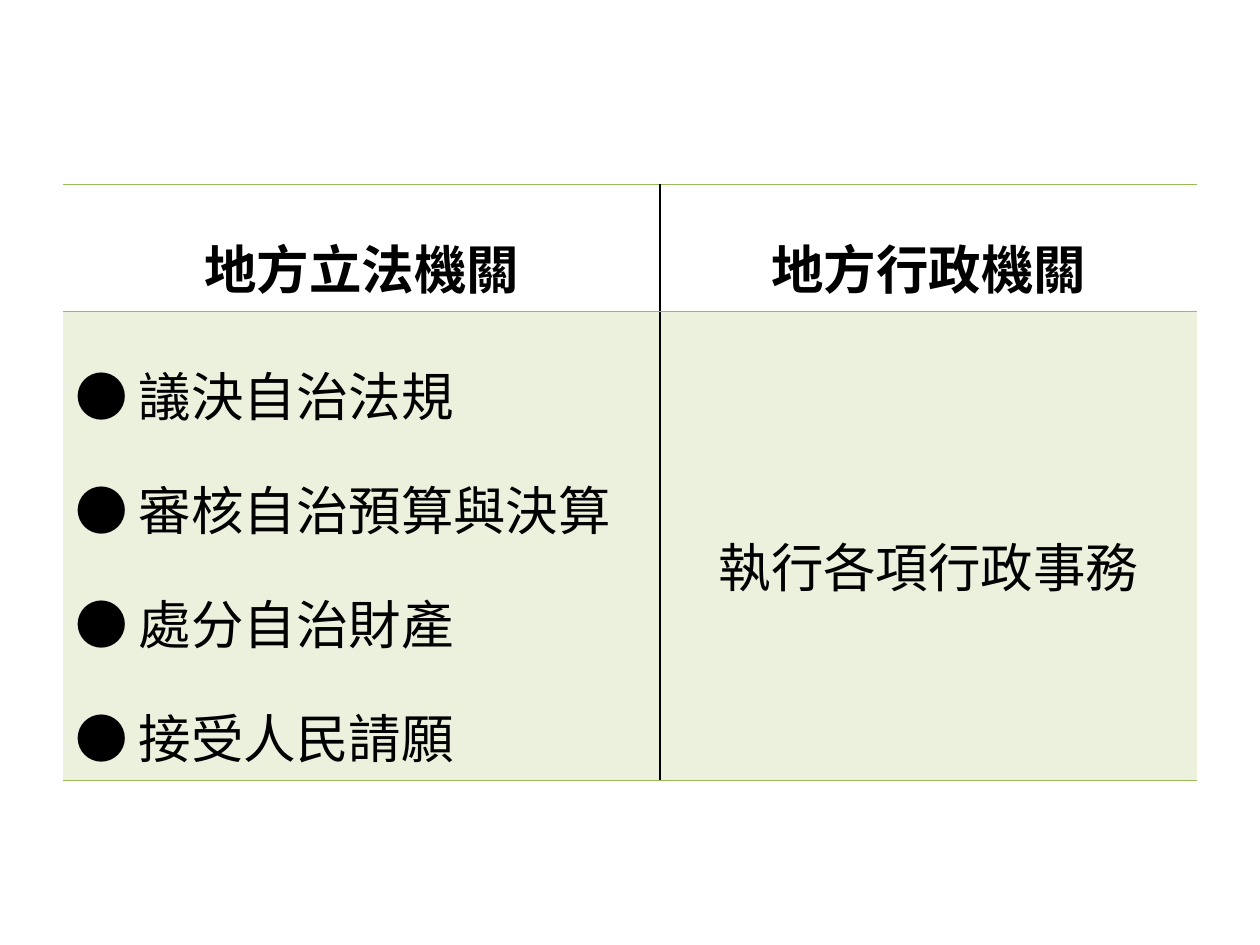
from dataclasses import dataclass

from lxml.etree import SubElement
from pptx import Presentation
from pptx.dml.color import RGBColor
from pptx.enum.text import MSO_ANCHOR as Anchor, PP_ALIGN as Align
from pptx.oxml.ns import qn
from pptx.util import Pt


@dataclass(frozen=True)
class Theme:
    """Colours and type of the slide."""
    font: str = "Noto Sans CJK SC"
    size: int = 30
    spacing: float = 1.5
    ink: str = "000000"
    green: str = "9BBB59"
    tint: int = 20
    rule: int = 1
    indent: int = 36


THEME = Theme()
HEADINGS = ["地方立法機關", "地方行政機關"]
DUTIES = [
    ["議決自治法規", "審核自治預算與決算", "處分自治財產", "接受人民請願"],
    ["執行各項行政事務"],
]


def set_borders(cell, left, right):
    """Rule a cell in green above and below, with the given side colours."""
    properties = cell._tc.get_or_add_tcPr()
    sides = {"L": left, "R": right, "T": THEME.green, "B": THEME.green}
    for side, color in sides.items():
        line = SubElement(properties, qn(f"a:ln{side}"), w=str(Pt(THEME.rule)))
        if color:
            fill = SubElement(line, qn("a:solidFill"))
            SubElement(fill, qn("a:srgbClr"), val=color)
        else:
            SubElement(line, qn("a:noFill"))


def tint_cell(cell):
    """Fill a cell with translucent green."""
    cell.fill.solid()
    cell.fill.fore_color.rgb = RGBColor.from_string(THEME.green)
    color = cell._tc.tcPr.find(qn("a:solidFill")).find(qn("a:srgbClr"))
    SubElement(color, qn("a:alpha"), val=str(THEME.tint * 1000))


def add_bullet(para):
    """Give a paragraph a round bullet with a hanging indent."""
    properties = para._p.get_or_add_pPr()
    properties.set("marL", str(Pt(THEME.indent)))
    properties.set("indent", str(-Pt(THEME.indent)))
    SubElement(properties, qn("a:buFont"), typeface=THEME.font)
    SubElement(properties, qn("a:buChar"), char="●")


def write_cell(cell, lines, bold=False, bulleted=False):
    """Write the lines as paragraphs of a cell, bulleted or centred."""
    cell.text_frame.text = "\n".join(lines)
    for para in cell.text_frame.paragraphs:
        if bulleted:
            add_bullet(para)
        else:
            para.alignment = Align.CENTER
        para.line_spacing = THEME.spacing
        for span in para.runs:
            span.font.size = Pt(THEME.size)
            span.font.bold = bold
            span.font.name = THEME.font
            span.font.color.rgb = RGBColor.from_string(THEME.ink)
            SubElement(span._r.rPr, qn("a:ea"), typeface=THEME.font)


def add_duties_table(page, left, top, width, height):
    """Place the table of local bodies and their duties in the given box."""
    table = page.shapes.add_table(2, 2, left, top, width, height).table
    table.first_row = table.horz_banding = False
    table.columns[0].width = Pt(341.25)
    table.columns[1].width = width - table.columns[0].width
    table.rows[0].height = Pt(72.5)
    table.rows[1].height = height - table.rows[0].height
    for column, (heading, duties) in enumerate(zip(HEADINGS, DUTIES)):
        head, body = table.cell(0, column), table.cell(1, column)
        sides = (None, THEME.ink) if column == 0 else (THEME.ink, None)
        for cell in (head, body):
            set_borders(cell, *sides)
        head.fill.background()
        tint_cell(body)
        write_cell(head, [heading], bold=True)
        write_cell(body, duties, bulleted=len(duties) > 1)
    table.cell(1, 1).vertical_anchor = Anchor.MIDDLE


def main():
    """Build and save the deck."""
    deck = Presentation()
    deck.slide_width, deck.slide_height = Pt(720), Pt(540)
    page = deck.slides.add_slide(deck.slide_layouts[6])
    add_duties_table(page, Pt(36), Pt(105.5), Pt(648), Pt(340.5))
    deck.save("out.pptx")


if __name__ == "__main__":
    main()
